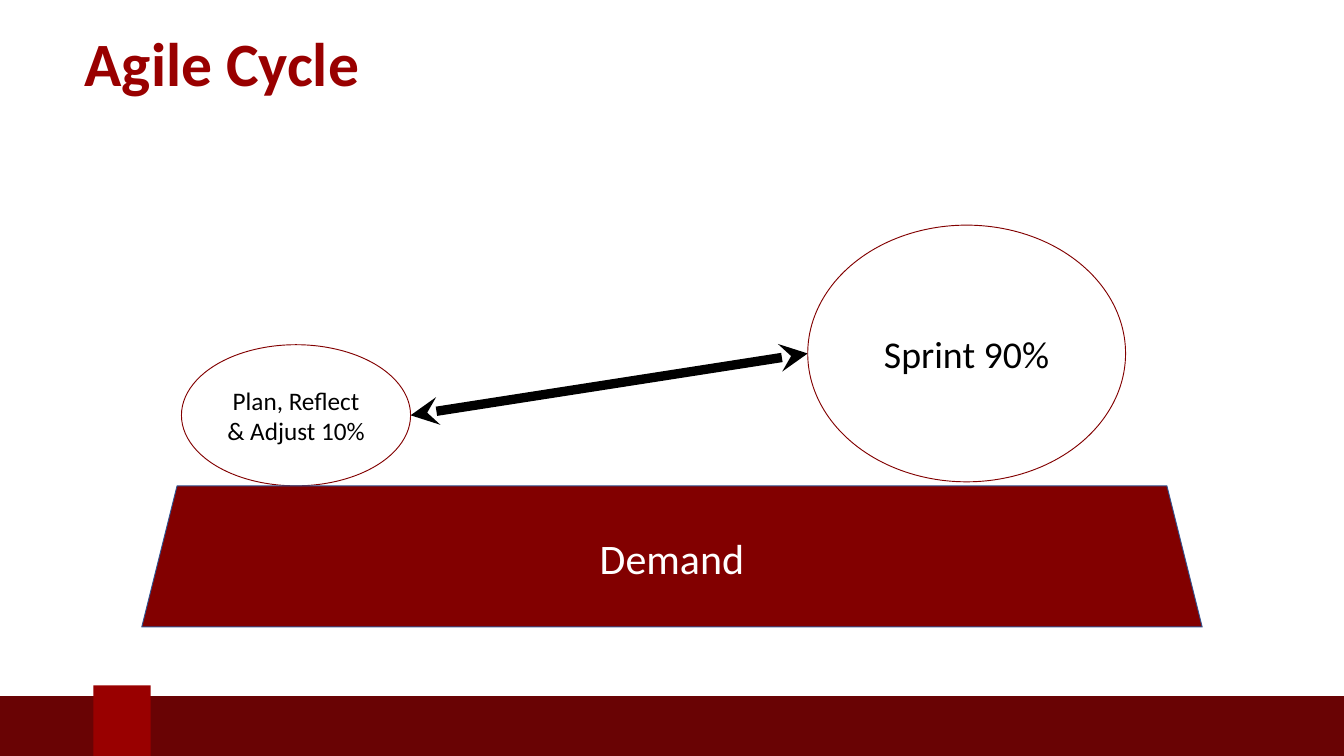
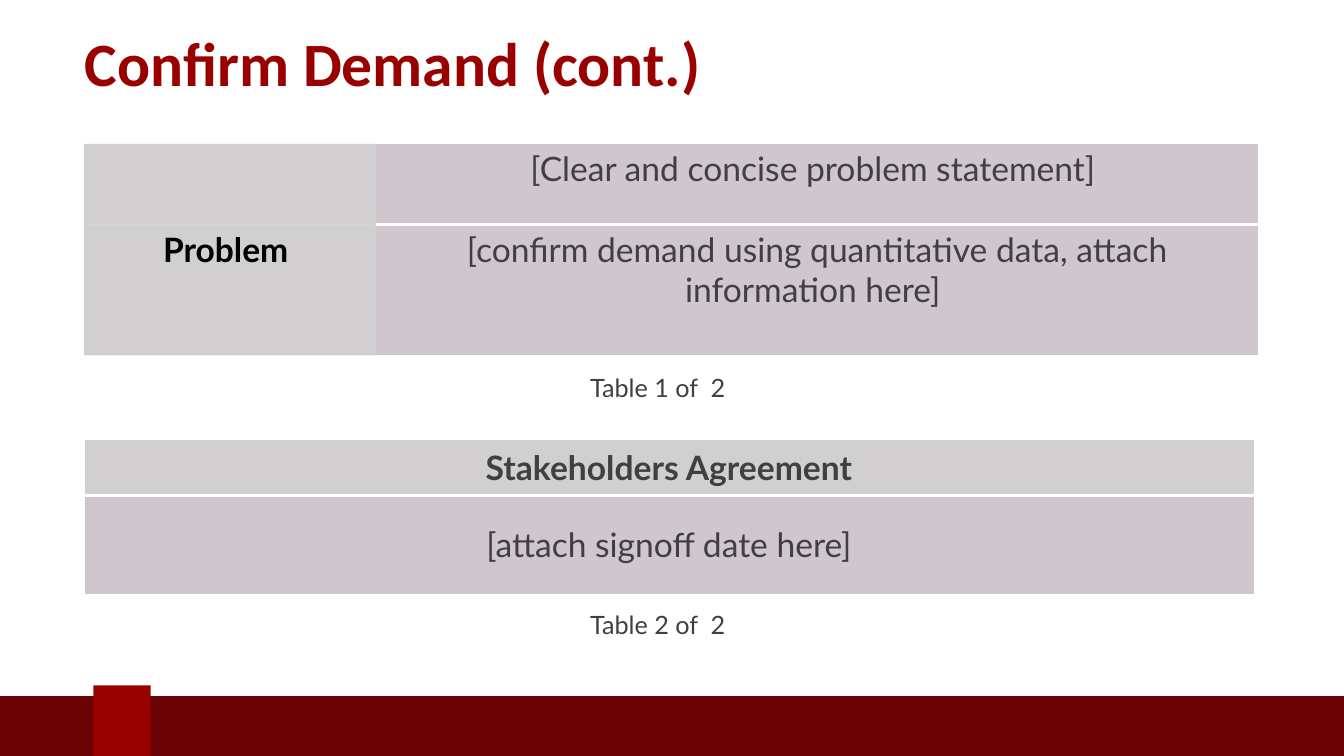
from dataclasses import dataclass, field

from lxml import etree
from pptx import Presentation
from pptx.dml.color import RGBColor
from pptx.enum.shapes import MSO_CONNECTOR, MSO_SHAPE
from pptx.enum.text import MSO_ANCHOR, MSO_AUTO_SIZE, PP_ALIGN
from pptx.oxml.ns import qn
from pptx.util import Pt

PX = 9144  # 100 px to the inch
SLIDE_W, SLIDE_H = 2000, 1125
INSET_X, INSET_Y = 15, 7
HEADING_FONT, BODY_FONT = "Calibri", "Lato"
NO_GRID_STYLE = "{2D5ABB26-0587-4C30-8999-92F81FD0307C}"
COLORS = {
    "white": "FFFFFF",
    "black": "000000",
    "text": "404040",
    "title": "990000",
    "footer": "690304",
    "demand": "820000",
    "demand edge": "325491",
    "label": "AFABAB",
    "content": "66435A",
}
OPACITY = {"label": 57, "content": 30}  # percent


@dataclass
class Entry:
    """One table cell; borders maps a side (L, R, T, B) to points."""
    text: str
    tone: str
    color: str = "text"
    bold: bool = False
    borders: dict = field(default_factory=dict)


def rgb(name):
    return RGBColor.from_string(COLORS[name])


def emu(*lengths):
    return [length * PX for length in lengths]


def style_text(frame, size, color, font=HEADING_FONT, bold=False,
               align=PP_ALIGN.LEFT):
    for paragraph in frame.paragraphs:
        paragraph.alignment = align
        paragraph.font.name = font
        paragraph.font.size = Pt(size)
        paragraph.font.bold = bold
        paragraph.font.color.rgb = rgb(color)


def set_insets(owner):
    owner.margin_left = owner.margin_right = INSET_X * PX
    owner.margin_top = owner.margin_bottom = INSET_Y * PX


def add_figure(slide, kind, box, fill, edge=None):
    figure = slide.shapes.add_shape(kind, *emu(*box))
    figure.shadow.inherit = False
    figure.fill.solid()
    figure.fill.fore_color.rgb = rgb(fill)
    if edge:
        figure.line.color.rgb = rgb(edge)
        figure.line.width = Pt(1)
    else:
        figure.line.fill.background()
    return figure


def add_labelled_figure(slide, kind, box, fill, edge, text, size, color):
    frame = add_figure(slide, kind, box, fill, edge).text_frame
    frame.text = text
    frame.word_wrap = True
    frame.vertical_anchor = MSO_ANCHOR.MIDDLE
    set_insets(frame)
    style_text(frame, size, color, align=PP_ALIGN.CENTER)


def move_footer_to_layout(slide):
    """Draw the footer band and its tab, then hand them to the layout."""
    footer = add_figure(slide, MSO_SHAPE.RECTANGLE, (-7, 1036, 2019, 100), "footer")
    tab = add_figure(slide, MSO_SHAPE.RECTANGLE, (139, 1020, 85, 116), "title")
    for part in (footer, tab):
        slide.slide_layout.shapes.element.append(part.element)


def add_titled_slide(deck, text):
    slide = deck.slides.add_slide(deck.slide_layouts[5])
    title = slide.shapes.title
    title.left, title.top, title.width, title.height = emu(116, 23, 1751, 153)
    frame = title.text_frame
    frame.text = text
    frame.word_wrap = True
    frame.auto_size = MSO_AUTO_SIZE.NONE
    frame.vertical_anchor = MSO_ANCHOR.MIDDLE
    style_text(frame, 66, "title", bold=True)
    frame.paragraphs[0].line_spacing = 0.9
    return slide


def add_double_arrow(slide, start, end):
    arrow = slide.shapes.add_connector(MSO_CONNECTOR.STRAIGHT, *emu(*start, *end))
    arrow.line.color.rgb = rgb("black")
    arrow.line.width = Pt(10)
    line = arrow.line._get_or_add_ln()
    for arrowhead in ("a:headEnd", "a:tailEnd"):
        etree.SubElement(line, qn(arrowhead), type="stealth")
    etree.SubElement(arrow.element.spPr, qn("a:effectLst"))


def add_agile_balance(slide, box):
    """Two phases joined by an arrow, resting on the demand base."""
    left, top, width, height = box
    base_h = 210
    base_top = top + height - base_h
    plan_x, plan_w, plan_h = left + 59, 341, 210
    plan_y = base_top - plan_h
    sprint_x, sprint_w, sprint_h = left + 991, 473, 382

    add_labelled_figure(slide, MSO_SHAPE.OVAL, (plan_x, plan_y, plan_w, plan_h),
                        "white", "demand", "Plan, Reflect & Adjust 10%", 27, "black")
    add_double_arrow(slide, (plan_x + plan_w, plan_y + plan_h // 2),
                     (sprint_x, top + sprint_h // 2))
    add_labelled_figure(slide, MSO_SHAPE.OVAL, (sprint_x, top, sprint_w, sprint_h),
                        "white", "demand", "Sprint 90%", 40.5, "black")
    add_labelled_figure(slide, MSO_SHAPE.TRAPEZOID, (left, base_top, width, base_h),
                        "demand", "demand edge", "Demand", 45, "white")


def add_borders(cell, borders):
    properties = cell._tc.get_or_add_tcPr()
    sides = [side for side in "LRTB" if side in borders]
    for place, side in enumerate(sides):
        line = etree.Element(qn(f"a:ln{side}"), w=str(Pt(borders[side])))
        fill = etree.SubElement(line, qn("a:solidFill"))
        etree.SubElement(fill, qn("a:srgbClr"), val=COLORS["white"])
        properties.insert(place, line)


def fill_cell(cell, entry, anchor):
    cell.fill.solid()
    cell.fill.fore_color.rgb = rgb(entry.tone)
    tint = cell._tc.tcPr.find(".//" + qn("a:srgbClr"))
    etree.SubElement(tint, qn("a:alpha"), val=str(OPACITY[entry.tone] * 1000))
    add_borders(cell, entry.borders)
    set_insets(cell)
    cell.vertical_anchor = anchor
    cell.text = entry.text
    style_text(cell.text_frame, 36, entry.color, BODY_FONT, entry.bold,
               PP_ALIGN.CENTER)


def add_grid(slide, origin, widths, heights, entries, anchor):
    frame = slide.shapes.add_table(len(heights), len(widths),
                                   *emu(*origin, sum(widths), sum(heights)))
    frame.element.find(".//" + qn("a:tableStyleId")).text = NO_GRID_STYLE
    table = frame.table
    table.first_row = table.horz_banding = False
    for column, width in zip(table.columns, widths):
        column.width = width * PX
    for row, height, row_entries in zip(table.rows, heights, entries):
        row.height = height * PX
        for cell, entry in zip(row.cells, row_entries):
            fill_cell(cell, entry, anchor)


def add_caption(slide, top, number):
    frame = slide.shapes.add_textbox(*emu(863, top, 272, 76)).text_frame
    frame.text = f"Table {number} of  2"
    frame.word_wrap = True
    frame.auto_size = MSO_AUTO_SIZE.SHAPE_TO_FIT_TEXT
    set_insets(frame)
    style_text(frame, 27, "text", BODY_FONT)
    frame.paragraphs[0].line_spacing = 1.5
    frame.paragraphs[0].space_after = Pt(9)


def add_problem_table(slide, origin):
    thin = {"T": 1, "R": 1, "B": 1}
    entries = [
        [Entry("", "label"),
         Entry("[Clear and concise problem statement] ", "content",
               borders={**thin, "B": 3})],
        [Entry("Problem ", "label", "black", True),
         Entry("[confirm demand using quantitative data, attach information here] ",
               "content", borders=thin)],
    ]
    add_grid(slide, origin, (434, 1314), (120, 195), entries, MSO_ANCHOR.TOP)


def add_agreement_table(slide, origin):
    thin = dict.fromkeys("LRTB", 1)
    entries = [
        [Entry("Stakeholders Agreement", "label", bold=True,
               borders={**thin, "B": 3})],
        [Entry("[attach signoff date here]", "content", borders=thin)],
    ]
    add_grid(slide, origin, (1741,), (83, 147), entries, MSO_ANCHOR.MIDDLE)


def main():
    deck = Presentation()
    deck.slide_width, deck.slide_height = emu(SLIDE_W, SLIDE_H)

    cycle = add_titled_slide(deck, "Agile Cycle")
    move_footer_to_layout(cycle)
    add_agile_balance(cycle, (211, 335, 1578, 598))

    demand = add_titled_slide(deck, "Confirm Demand (cont.)")
    add_problem_table(demand, (125, 214))
    add_caption(demand, 525, 1)
    add_agreement_table(demand, (125, 654))
    add_caption(demand, 877, 2)

    deck.save("out.pptx")


if __name__ == "__main__":
    main()
